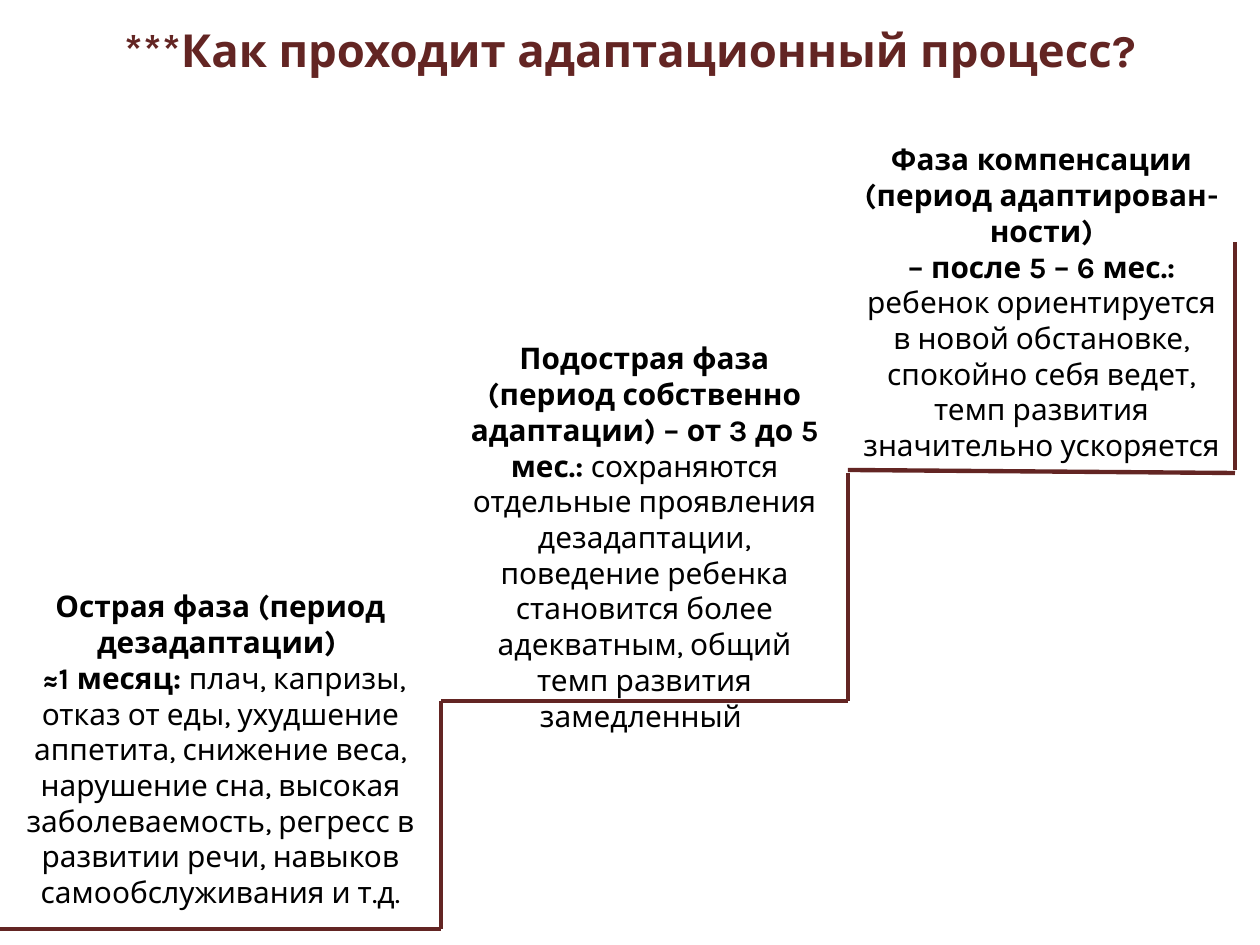
from itertools import pairwise

from lxml import etree
from pptx import Presentation
from pptx.dml.color import RGBColor
from pptx.enum.shapes import MSO_CONNECTOR
from pptx.enum.text import MSO_ANCHOR, MSO_AUTO_SIZE, PP_ALIGN
from pptx.oxml.ns import qn
from pptx.util import Emu, Pt

STRAIGHT = MSO_CONNECTOR.STRAIGHT
CENTER = PP_ALIGN.CENTER
TOP, BOTTOM = MSO_ANCHOR.TOP, MSO_ANCHOR.BOTTOM
NO_FIT, GROW = MSO_AUTO_SIZE.NONE, MSO_AUTO_SIZE.SHAPE_TO_FIT_TEXT

PX_PER_INCH = 126
FONT = "Karla"
COLORS = {"accent": "632523", "text": "000000"}
TITLE_ONLY = 5

TITLE = "***Как проходит адаптационный процесс?"

# Staircase: flat treads joined by risers of equal height
RISE = 228
FLOOR = 929
STEP_EDGES = [0, 441, 848, 1235]

# Each phase: box in px, then paragraphs of (text, bold) spans
PHASES = [
    ((0, 582, 441, 338), [
        [("Острая фаза (период дезадаптации) ", True)],
        [(" ≈1 месяц: ", True),
         ("плач, капризы, отказ от еды, ухудшение аппетита, снижение веса, "
          "нарушение сна, высокая заболеваемость, регресс в развитии речи, "
          "навыков самообслуживания и т.д.", False)],
    ]),
    ((451, 334, 387, 373), [
        [("Подострая фаза (период собственно адаптации) – от 3 до 5 мес.: ", True),
         ("сохраняются отдельные проявления дезадаптации, поведение ребенка "
          "становится более адекватным, общий темп развития замедленный ", False)],
    ]),
    ((848, 135, 387, 338), [
        [("Фаза компенсации (период адаптирован-ности)", True)],
        [("– после 5 – 6 мес.: ", True),
         ("ребенок ориентируется в новой обстановке, спокойно себя ведет, "
          "темп развития значительно ускоряется", False)],
    ]),
]


def px(length):
    return Emu(round(length * 914400 / PX_PER_INCH))


def style_span(span, size, color, bold):
    span.font.name = FONT
    span.font.size = Pt(size)
    span.font.bold = bold
    span.font.color.rgb = RGBColor.from_string(COLORS[color])


def add_title(page):
    title = page.shapes.title
    title.left, title.top, title.width, title.height = map(px, (25, 6, 1211, 78))
    frame = title.text_frame
    frame.text = TITLE
    frame.word_wrap = True
    frame.auto_size = NO_FIT
    frame.vertical_anchor = BOTTOM
    para = frame.paragraphs[0]
    para.alignment = CENTER
    para.line_spacing = 0.9
    style_span(para.runs[0], 26, "accent", True)


def add_line(group, start, end):
    line = group.shapes.add_connector(STRAIGHT, *map(px, start + end))
    line.line.color.rgb = RGBColor.from_string(COLORS["accent"])
    line.line.width = Pt(2.5)
    etree.SubElement(line._element.spPr, qn("a:effectLst"))


def add_staircase(page):
    group = page.shapes.add_group_shape()
    for step, (left, right) in enumerate(pairwise(STEP_EDGES)):
        level = FLOOR - step * RISE
        # The last step is tilted slightly, its riser starting a little higher
        lift = 3 if step == 2 else 0
        add_line(group, (left, level - lift), (right, level))
        add_line(group, (right, level - lift), (right, level - lift - RISE))


def add_phase(page, place, paragraphs):
    box = page.shapes.add_textbox(*map(px, place))
    frame = box.text_frame
    frame.word_wrap = True
    frame.auto_size = GROW
    frame.vertical_anchor = TOP
    for index, spans in enumerate(paragraphs):
        para = frame.add_paragraph() if index else frame.paragraphs[0]
        para.alignment = CENTER
        for text, bold in spans:
            span = para.add_run()
            span.text = text
            style_span(span, 17, "text", bold)


def main():
    deck = Presentation()
    deck.slide_width, deck.slide_height = px(1260), px(945)
    page = deck.slides.add_slide(deck.slide_layouts[TITLE_ONLY])
    add_title(page)
    add_staircase(page)
    for place, paragraphs in PHASES:
        add_phase(page, place, paragraphs)
    deck.save("out.pptx")


if __name__ == "__main__":
    main()
